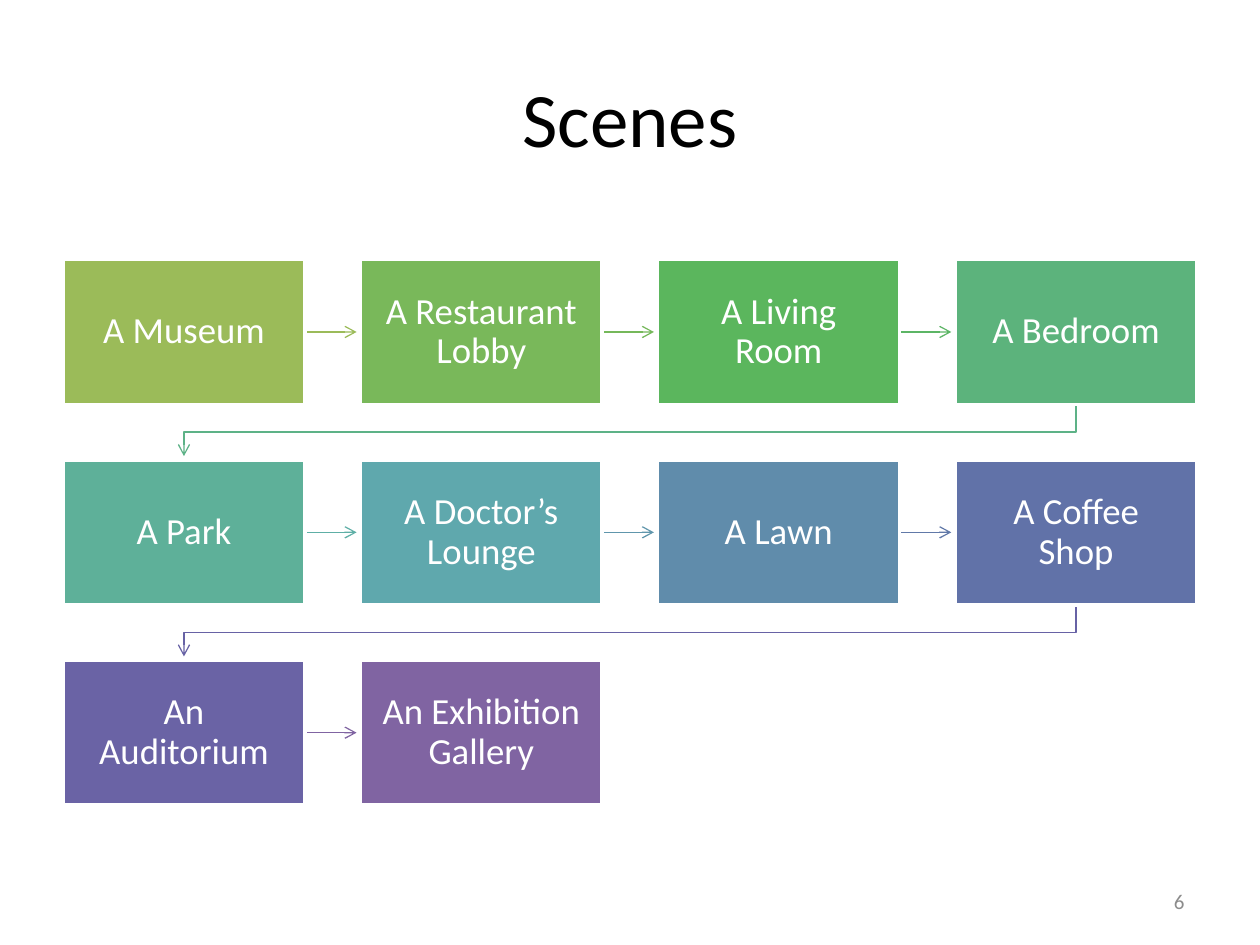
import pptx
import pptx.util
from pptx.dml.color import RGBColor
from pptx.enum.shapes import MSO_CONNECTOR, MSO_SHAPE
from pptx.enum.text import MSO_ANCHOR, PP_ALIGN
from pptx.oxml.ns import qn
from pptx.oxml.xmlchemy import OxmlElement
from pptx.util import Inches, Pt

TITLE = "Scenes"
PAGE_NUMBER = "6"
# Scene, box colour, colour of the arrow to the next scene
SCENES = [
    ("A Museum", "9BBB59", "9BBB59"),
    ("A Restaurant Lobby", "79B85A", "75B85A"),
    ("A Living Room", "5BB65D", "5CB565"),
    ("A Bedroom", "5CB37C", "5DB287"),
    ("A Park", "5EB099", "5EAFA6"),
    ("A Doctor’s Lounge", "5FA8AD", "6096AC"),
    ("A Lawn", "608CAB", "6179A8"),
    ("A Coffee Shop", "6172A8", "6762A5"),
    ("An Auditorium", "6A63A5", "8064A2"),
    ("An Exhibition Gallery", "8064A2", None),
]

FONT = "Calibri"
BLACK = RGBColor(0x00, 0x00, 0x00)
WHITE = RGBColor(0xFF, 0xFF, 0xFF)
GREY = RGBColor(0x8C, 0x8C, 0x8C)

COLUMNS = 4
LEFT, TOP = 0.5, 2.06
BOX_W, BOX_H = 1.92, 1.15
STEP_X, STEP_Y = 2.36, 1.59
ARROW = 0.41
TURN = 0.22  # drop below a row before its arrow turns back


def write(shape, text, size, color, align):
    frame = shape.text_frame
    frame.word_wrap = True
    frame.vertical_anchor = MSO_ANCHOR.MIDDLE
    paragraph = frame.paragraphs[0]
    paragraph.text = text
    paragraph.alignment = align
    paragraph.font.name = FONT
    paragraph.font.size = Pt(size)
    paragraph.font.color.rgb = color
    return paragraph


def style_arrow(arrow, color):
    arrow.line.color.rgb = RGBColor.from_string(color)
    arrow.line.width = Pt(0.75)
    properties = arrow._element.spPr
    head = OxmlElement("a:tailEnd")
    head.set("type", "arrow")
    properties.find(qn("a:ln")).append(head)
    properties.append(OxmlElement("a:effectLst"))


def add_straight_arrow(shapes, x, y, color):
    """Arrow from the right edge of the box at x, y to its neighbour."""
    start, middle = x + BOX_W, y + BOX_H / 2
    arrow = shapes.add_connector(
        MSO_CONNECTOR.STRAIGHT, Inches(start), Inches(middle),
        Inches(start + ARROW), Inches(middle))
    style_arrow(arrow, color)


def add_return_arrow(shapes, x, y, color):
    """Arrow from under the last box of a row to the first of the next row."""
    start, end, bottom = x + BOX_W / 2, LEFT + BOX_W / 2, y + BOX_H
    corners = [(start, bottom + TURN), (end, bottom + TURN), (end, bottom + ARROW)]
    builder = shapes.build_freeform(Inches(start), Inches(bottom))
    builder.add_line_segments(
        [(Inches(px), Inches(py)) for px, py in corners], close=False)
    arrow = builder.convert_to_shape()
    arrow.fill.background()
    style_arrow(arrow, color)


def add_scene(shapes, x, y, scene, color):
    box = shapes.add_shape(
        MSO_SHAPE.RECTANGLE, Inches(x), Inches(y), Inches(BOX_W), Inches(BOX_H))
    box.shadow.inherit = False
    box.fill.solid()
    box.fill.fore_color.rgb = RGBColor.from_string(color)
    box.line.color.rgb = WHITE
    box.line.width = Pt(2)
    frame = box.text_frame
    frame.margin_left = frame.margin_right = Inches(0.16)
    frame.margin_top = frame.margin_bottom = Inches(0.16)
    write(box, scene, 21, WHITE, PP_ALIGN.CENTER).line_spacing = 0.9


def main():
    deck = pptx.Presentation()
    deck.slide_width, deck.slide_height = Inches(10), Inches(7.5)
    slide = deck.slides.add_slide(deck.slide_layouts.get_by_name("Title Only"))
    shapes = slide.shapes

    title = shapes.title
    title.left, title.top = Inches(0.5), Inches(0.3)
    title.width, title.height = Inches(9), Inches(1.25)
    write(title, TITLE, 44, BLACK, PP_ALIGN.CENTER)

    for index, (scene, box_color, arrow_color) in enumerate(SCENES):
        row, column = divmod(index, COLUMNS)
        x, y = LEFT + column * STEP_X, TOP + row * STEP_Y
        if arrow_color:
            last = column == COLUMNS - 1
            add_arrow = add_return_arrow if last else add_straight_arrow
            add_arrow(shapes, x, y, arrow_color)
        add_scene(shapes, x, y, scene, box_color)

    page = shapes.add_textbox(Inches(7.17), Inches(6.95), Inches(2.33), Inches(0.4))
    write(page, PAGE_NUMBER, 12, GREY, PP_ALIGN.RIGHT)

    deck.save("out.pptx")


if __name__ == "__main__":
    main()
